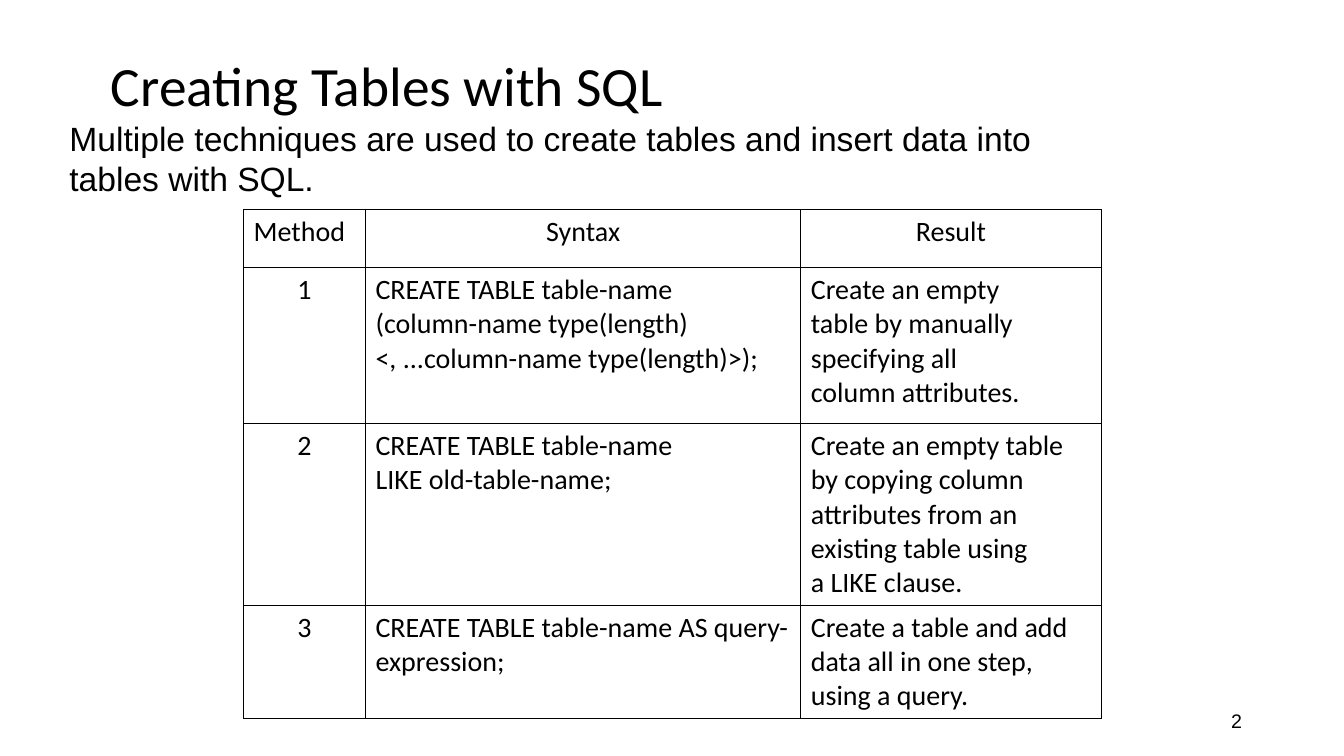
from dataclasses import dataclass

from lxml import etree
from pptx import Presentation
from pptx.dml import color
from pptx.enum import text as t
from pptx.oxml import ns
from pptx.util import Cm, Pt

BLACK = "000000"
COLUMN_WIDTHS = (3.07, 10.97, 7.57)
ROW_HEIGHTS = (1.47, 3.93, 4.57, 2.84)
LEFT, CENTER, RIGHT = t.PP_ALIGN.LEFT, t.PP_ALIGN.CENTER, t.PP_ALIGN.RIGHT


@dataclass
class Method:
    number: str
    syntax: str
    result: str


HEADER = Method("Method", "Syntax", "Result")
METHODS = [
    Method("1",
           "CREATE TABLE table-name\n(column-name type(length)\n"
           "<, ...column-name type(length)>);",
           "Create an empty\ntable by manually specifying all\ncolumn attributes."),
    Method("2",
           "CREATE TABLE table-name\nLIKE old-table-name;",
           "Create an empty table by copying column attributes from an "
           "existing table using\na LIKE clause."),
    Method("3",
           "CREATE TABLE table-name AS query-expression;",
           "Create a table and add data all in one step, using a query."),
]


def rgb(value: str) -> color.RGBColor:
    return color.RGBColor.from_string(value)


def write(frame, content: str, *, size: float, font: str,
          align=LEFT, anchor=t.MSO_ANCHOR.TOP, spacing: float = 1.0) -> None:
    """Fill a text frame with one formatted paragraph; newlines are line breaks."""
    frame.word_wrap = True
    frame.vertical_anchor = anchor
    para = frame.paragraphs[0]
    para.alignment = align
    para.line_spacing = spacing
    for index, line in enumerate(content.split("\n")):
        if index:
            para.add_line_break()
        span = para.add_run()
        span.text = line
        span.font.size = Pt(size)
        span.font.name = font
        span.font.color.rgb = rgb(BLACK)


def add_borders(cell, line_color: str, width: float) -> None:
    properties = cell._tc.get_or_add_tcPr()
    for index, side in enumerate(("a:lnL", "a:lnR", "a:lnT", "a:lnB")):
        line = etree.Element(ns.qn(side), w=str(Pt(width)))
        fill = etree.SubElement(line, ns.qn("a:solidFill"))
        etree.SubElement(fill, ns.qn("a:srgbClr"), val=line_color)
        properties.insert(index, line)


def add_methods_table(page) -> None:
    rows = [HEADER, *METHODS]
    table = page.shapes.add_table(
        len(rows), len(COLUMN_WIDTHS), Cm(6.14), Cm(5.28),
        Cm(sum(COLUMN_WIDTHS)), Cm(sum(ROW_HEIGHTS))).table
    table.first_row = table.horz_banding = False
    for column, width in zip(table.columns, COLUMN_WIDTHS):
        column.width = Cm(width)
    for row, height, method in zip(table.rows, ROW_HEIGHTS, rows):
        row.height = Cm(height)
        # The header centres its last two labels, the other rows their number
        aligns = (LEFT, CENTER, CENTER) if method is HEADER else (CENTER, LEFT, LEFT)
        contents = (method.number, method.syntax, method.result)
        for cell, content, align in zip(row.cells, contents, aligns):
            write(cell.text_frame, content, size=20, font="Calibri", align=align)
            cell.fill.background()
            add_borders(cell, BLACK, 1)


def main() -> None:
    deck = Presentation()
    deck.slide_width, deck.slide_height = Cm(33.87), Cm(19.05)
    page = deck.slides.add_slide(deck.slide_layouts[5])

    # Title
    title = page.shapes.title
    title.left, title.top, title.width, title.height = Cm(2.54), Cm(1.27), Cm(31.32), Cm(1.9)
    title.text_frame.auto_size = t.MSO_AUTO_SIZE.NONE
    write(title.text_frame, "Creating Tables with SQL", size=39.6, font="Calibri",
          anchor=t.MSO_ANCHOR.MIDDLE, spacing=0.9)

    # Table of methods
    add_methods_table(page)

    # Slide number
    number = page.shapes.add_textbox(Cm(23.93), Cm(17.65), Cm(7.62), Cm(1.02))
    write(number.text_frame, "2", size=14, font="Arial", align=RIGHT,
          anchor=t.MSO_ANCHOR.MIDDLE)

    # Introduction
    intro = page.shapes.add_textbox(Cm(1.75), Cm(2.97), Cm(26.19), Cm(2.34))
    frame = intro.text_frame
    frame.margin_left = frame.margin_top = frame.margin_right = frame.margin_bottom = 0
    write(frame, "Multiple techniques are used to create tables and insert data "
                 "into tables with SQL.", size=24, font="Arial")

    deck.save("out.pptx")


if __name__ == "__main__":
    main()
